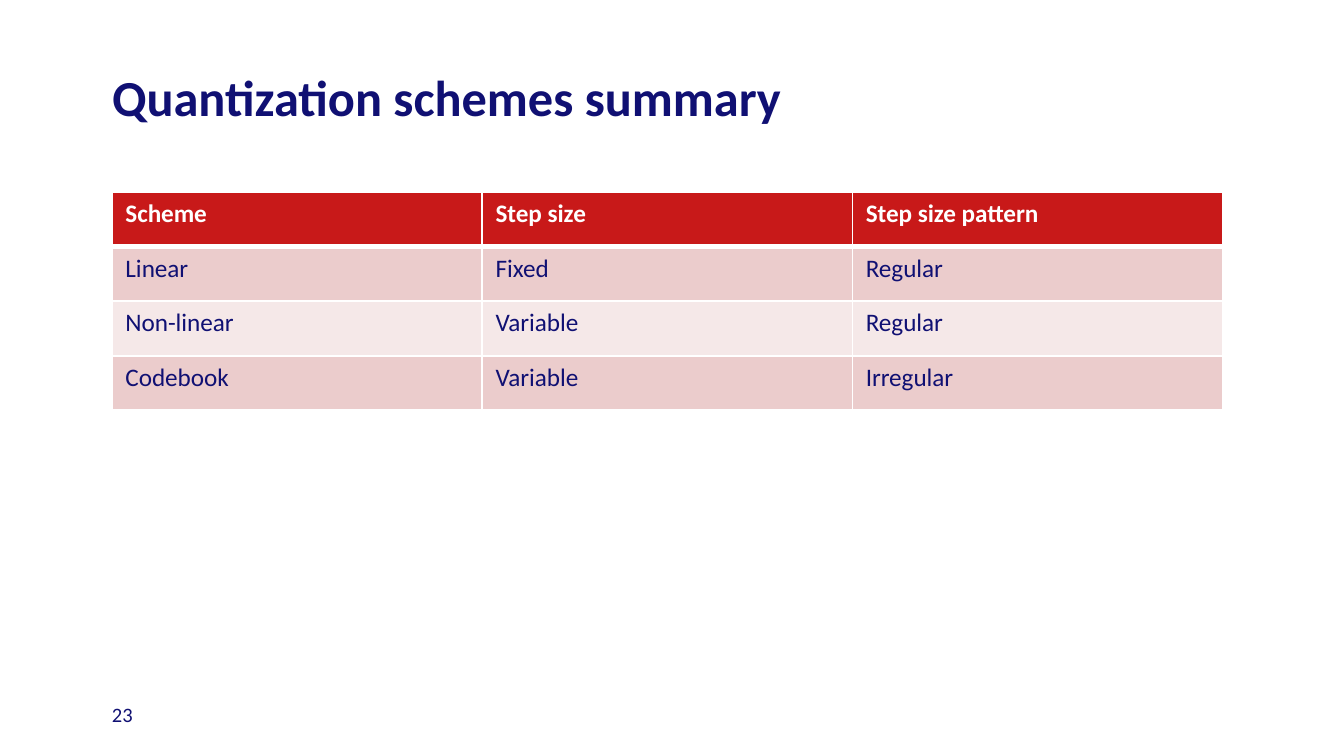
from dataclasses import dataclass

from lxml.etree import SubElement
from pptx import Presentation
from pptx.dml.color import RGBColor
from pptx.enum.shapes import MSO_SHAPE
from pptx.enum.text import MSO_ANCHOR, MSO_AUTO_SIZE, PP_ALIGN
from pptx.oxml.ns import qn
from pptx.util import Pt


@dataclass(frozen=True)
class Theme:
    font: str = "Calibri"
    navy: str = "101073"
    white: str = "FFFFFF"
    red: str = "C81919"
    bands: tuple = ("EBCCCC", "F5E8E8")
    title_size: float = 27
    table_size: float = 13.5
    number_size: float = 11


THEME = Theme()
LEFT, WIDTH = 60, 595
ROW_HEIGHT = 29.2
SCHEMES = [
    ("Scheme", "Step size", "Step size pattern"),
    ("Linear", "Fixed", "Regular"),
    ("Non-linear", "Variable", "Regular"),
    ("Codebook", "Variable", "Irregular"),
]


def fill_solid(item, color):
    item.fill.solid()
    item.fill.fore_color.rgb = RGBColor.from_string(color)


def set_margins(tf, left=0):
    tf.margin_left = Pt(left)
    tf.margin_top = tf.margin_right = tf.margin_bottom = 0


def write(tf, text, size, color, bold=False):
    tf.text = text
    p = tf.paragraphs[0]
    p.alignment = PP_ALIGN.LEFT
    font = p.runs[0].font
    font.name, font.size, font.bold = THEME.font, Pt(size), bold
    font.color.rgb = RGBColor.from_string(color)
    return p


def add_title(slide, text):
    sp = slide.shapes.title
    sp.left, sp.top, sp.width, sp.height = Pt(LEFT), Pt(41), Pt(WIDTH), Pt(42.5)
    tf = sp.text_frame
    tf.auto_size = MSO_AUTO_SIZE.NONE
    tf.vertical_anchor = MSO_ANCHOR.TOP
    set_margins(tf)
    p = write(tf, text, THEME.title_size, THEME.navy, bold=True)
    p.line_spacing = Pt(THEME.title_size)


def add_page_number(slide, number):
    sp = slide.shapes.add_shape(MSO_SHAPE.RECTANGLE, 0, Pt(360), Pt(88), Pt(45))
    sp.shadow.inherit = False
    fill_solid(sp, THEME.white)
    sp.line.fill.background()
    tf = sp.text_frame
    tf.vertical_anchor = MSO_ANCHOR.MIDDLE
    set_margins(tf, LEFT)
    write(tf, number, THEME.number_size, THEME.navy)


def set_borders(cell, bottom, top):
    tc_pr = cell._tc.get_or_add_tcPr()
    for side, width in (("L", 1), ("R", 1), ("T", top), ("B", bottom)):
        ln = SubElement(tc_pr, qn(f"a:ln{side}"), w=str(Pt(width)))
        SubElement(SubElement(ln, qn("a:solidFill")), qn("a:srgbClr"), val=THEME.white)


def add_table(slide, rows):
    n_rows, n_cols = len(rows), len(rows[0])
    table = slide.shapes.add_table(
        n_rows, n_cols, Pt(LEFT), Pt(103), Pt(WIDTH), Pt(ROW_HEIGHT * n_rows)
    ).table
    for i, row in enumerate(rows):
        header = i == 0
        for j, text in enumerate(row):
            cell = table.cell(i, j)
            # The rule under the header is shared with the first body row
            set_borders(cell, bottom=3 if header else 1, top=3 if i == 1 else 1)
            fill_solid(cell, THEME.red if header else THEME.bands[(i - 1) % 2])
            color = THEME.white if header else THEME.navy
            write(cell.text_frame, text, THEME.table_size, color, bold=header)


def main():
    prs = Presentation()
    prs.slide_width, prs.slide_height = Pt(720), Pt(405)
    slide = prs.slides.add_slide(prs.slide_layouts[5])
    fill_solid(slide.background, THEME.white)

    # Heading, page number and comparison table
    add_title(slide, "Quantization schemes summary")
    add_page_number(slide, "23")
    add_table(slide, SCHEMES)

    prs.save("out.pptx")


if __name__ == "__main__":
    main()
